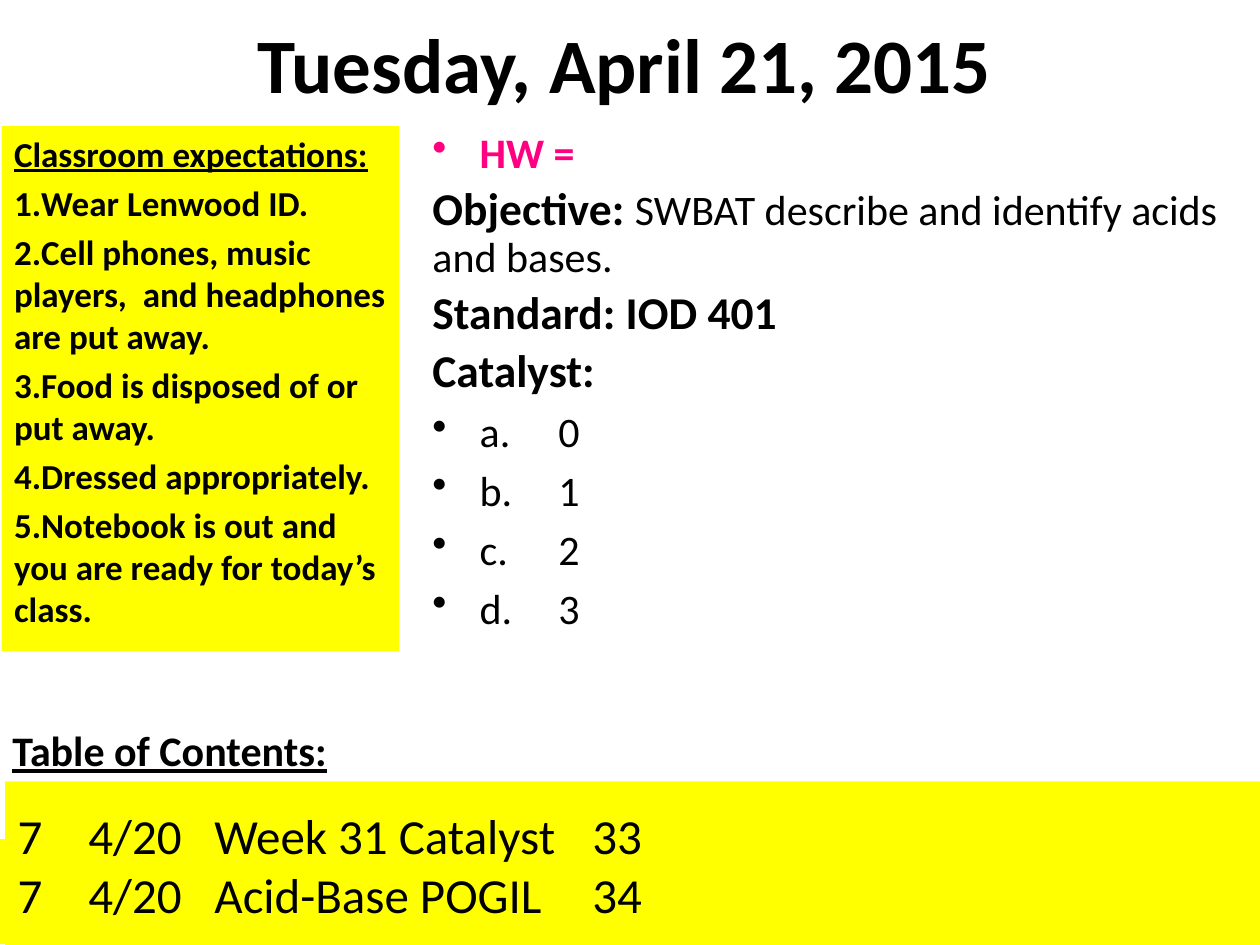
import lxml.etree
import pptx
import pptx.dml.color
import pptx.enum.shapes
import pptx.enum.text
import pptx.oxml.ns
import pptx.util

Pt = pptx.util.Pt
ANCHOR = pptx.enum.text.MSO_ANCHOR
BLACK = pptx.dml.color.RGBColor(0, 0, 0)
PINK = pptx.dml.color.RGBColor(0xFF, 0, 0x80)
YELLOW = pptx.dml.color.RGBColor(0xFF, 0xFF, 0)

RULES = ["Wear Lenwood ID.",
         "Cell phones, music players,  and headphones are put away.",
         "Food is disposed of or put away.",
         "Dressed appropriately.",
         "Notebook is out and you are ready for today’s class."]
ANSWERS = ["a.\t0", "b.\t1", "c.\t2", "d.\t3"]
CONTENTS = ["7\t4/20\tWeek 31 Catalyst\t33", "7\t4/20\tAcid-Base POGIL\t34"]


def add_panel(page, box, fill=None, anchor=ANCHOR.TOP):
    """Add a text area over the box, yellow when a fill is given, and return its text frame."""
    edges = [Pt(edge) for edge in box]
    if fill is None:
        shape = page.shapes.add_textbox(*edges)
    else:
        shape = page.shapes.add_shape(pptx.enum.shapes.MSO_SHAPE.RECTANGLE, *edges)
        shape.shadow.inherit = False
        shape.fill.solid()
        shape.fill.fore_color.rgb = fill
        shape.line.fill.background()
    shape.text_frame.word_wrap = True
    shape.text_frame.vertical_anchor = anchor
    return shape.text_frame


def style_para(para, size, bold=False, underline=False, color=BLACK, gap=0.0, spacing=1.0):
    """Format every run of a paragraph, with a gap above in proportion to the size."""
    para.alignment = pptx.enum.text.PP_ALIGN.LEFT
    para.space_before = Pt(size * gap)
    para.line_spacing = spacing
    for span in para.runs:
        span.font.name = "Calibri"
        span.font.size = Pt(size)
        span.font.bold = bold
        span.font.underline = underline
        span.font.color.rgb = color


def set_properties(para, tag, indent=0, **attributes):
    """Give a paragraph a hanging indent and one bullet element."""
    properties = para._p.get_or_add_pPr()
    properties.set("marL", str(Pt(indent)))
    properties.set("indent", str(-Pt(indent)))
    lxml.etree.SubElement(properties, pptx.oxml.ns.qn(tag), attributes)


def set_tabs(para, stops):
    """Give a paragraph left tab stops, in points."""
    tabs = lxml.etree.SubElement(para._p.get_or_add_pPr(), pptx.oxml.ns.qn("a:tabLst"))
    for stop in stops:
        lxml.etree.SubElement(tabs, pptx.oxml.ns.qn("a:tab"), pos=str(Pt(stop)), algn="l")


def add_title(page, box):
    """Write the date across the top."""
    frame = add_panel(page, box, anchor=ANCHOR.BOTTOM)
    frame.text = "Tuesday, April 21, 2015"
    style_para(frame.paragraphs[0], 44, bold=True)
    frame.paragraphs[0].alignment = pptx.enum.text.PP_ALIGN.CENTER


def add_lesson(page, box):
    """Write homework, objective, standard and the catalyst answers."""
    frame = add_panel(page, box)
    objective = "Objective: "
    frame.text = "\n".join(["HW =", objective, "Standard: IOD 401", "Catalyst:"] + ANSWERS)
    paras = frame.paragraphs
    paras[1].add_run().text = "SWBAT describe and identify acids and bases."
    style_para(paras[0], 24, bold=True, color=PINK, gap=0.2, spacing=0.9)
    for para in paras[1:4]:
        style_para(para, 26, bold=True, gap=0.2, spacing=0.9)
    detail = paras[1].runs[1].font
    detail.size = Pt(24)
    detail.bold = False
    for para in paras[4:]:
        style_para(para, 24, gap=0.2)
    for para in (paras[0], *paras[4:]):
        set_properties(para, "a:buChar", 27, char="•")


def add_expectations(page, box):
    """Write the numbered classroom rules on yellow."""
    frame = add_panel(page, box, YELLOW)
    frame.text = "\n".join(["Classroom expectations:"] + RULES)
    for para in frame.paragraphs:
        style_para(para, 20, bold=True, gap=0.2)
    heading, *rules = frame.paragraphs
    heading.runs[0].font.underline = True
    for para in rules:
        set_properties(para, "a:buAutoNum", type="arabicPeriod")


def add_contents(page, box):
    """Write the contents heading and its rows on a yellow band that reaches the page edge."""
    left, top, width, height = box
    add_panel(page, (0, top + 33, width, height - 35), YELLOW)
    heading = add_panel(page, (0, top - 66, 226, 66), anchor=ANCHOR.BOTTOM)
    heading.text = "Table of Contents:"
    style_para(heading.paragraphs[0], 24, bold=True, underline=True)
    frame = add_panel(page, box, YELLOW, ANCHOR.MIDDLE)
    frame.text = "\n".join(CONTENTS)
    for para in frame.paragraphs:
        style_para(para, 28)
        set_properties(para, "a:buNone", 40.5)
        set_tabs(para, (40.5, 182, 615))


def main():
    """Build the slide and save it."""
    deck = pptx.Presentation()
    deck.slide_width, deck.slide_height = Pt(720), Pt(540)
    page = deck.slides.add_slide(deck.slide_layouts[6])
    add_title(page, (36, 0, 642, 66))
    add_lesson(page, (240, 72, 480, 362))
    add_expectations(page, (1, 72, 227, 300))
    add_contents(page, (3, 446.5, 720, 95))
    deck.save("out.pptx")


if __name__ == "__main__":
    main()
